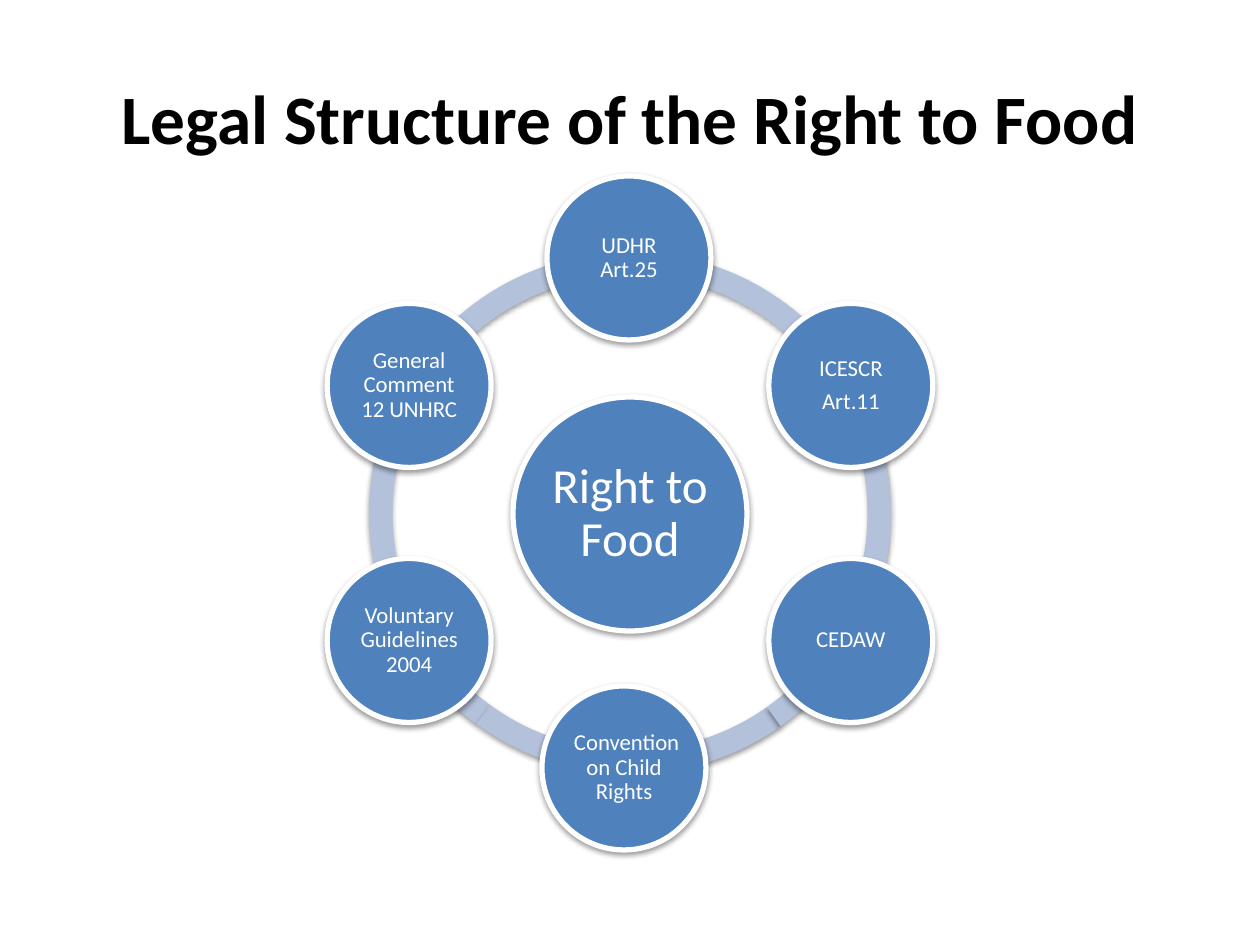
from dataclasses import dataclass
from math import cos, radians, sin

from lxml import etree
from pptx import Presentation
from pptx.dml.color import RGBColor
from pptx.enum.shapes import MSO_SHAPE
from pptx.enum.text import MSO_ANCHOR, PP_ALIGN
from pptx.oxml.ns import qn
from pptx.util import Pt

OVAL, ARC = MSO_SHAPE.OVAL, MSO_SHAPE.BLOCK_ARC
MIDDLE, CENTER = MSO_ANCHOR.MIDDLE, PP_ALIGN.CENTER
SCALE = 914400 / 126


def px(n):
    return round(n * SCALE)


@dataclass(frozen=True)
class Theme:
    font: str = "Calibri"
    black: str = "000000"
    white: str = "FFFFFF"
    blue: str = "4F81BD"
    pale: str = "B3C1DB"
    title: float = 39.6
    hub: int = 28
    node: int = 13


class Deck:
    def __init__(self, theme):
        self.theme = theme
        self.file = Presentation()
        self.file.slide_width, self.file.slide_height = px(1260), px(945)
        self.page = self.file.slides.add_slide(self.file.slide_layouts[5])
        self.group = self.page.shapes.add_group_shape()

    def label(self, frame, lines, size, color, bold=False, inset=None):
        frame.word_wrap = True
        frame.vertical_anchor = MIDDLE
        if inset is not None:
            frame.margin_left = frame.margin_right = px(inset)
            frame.margin_top = frame.margin_bottom = px(inset)
        for i, line in enumerate(lines):
            para = frame.add_paragraph() if i else frame.paragraphs[0]
            para.alignment = CENTER
            if inset is not None:
                para.line_spacing = 0.9
            if i:
                para.space_before = Pt(4.5)
            run = para.add_run()
            run.text = line
            font = run.font
            font.name, font.size, font.bold = self.theme.font, Pt(size), bold
            font.color.rgb = RGBColor.from_string(color)

    def title(self, text, x, y, w, h):
        box = self.page.shapes.title
        box.left, box.top, box.width, box.height = map(px, (x, y, w, h))
        self.label(box.text_frame, [text], self.theme.title, self.theme.black, True)

    def shade(self, shape):
        shape.shadow.inherit = False
        effects = shape._element.spPr.find(qn("a:effectLst"))
        outer = etree.SubElement(effects, qn("a:outerShdw"), blurRad="40000",
                                 dist="20000", dir="5400000", rotWithShape="0")
        color = etree.SubElement(outer, qn("a:srgbClr"), val=self.theme.black)
        etree.SubElement(color, qn("a:alpha"), val="38000")

    def round(self, kind, x, y, size, fill):
        """Place a round shape by its centre."""
        shape = self.group.shapes.add_shape(
            kind, px(x - size / 2), px(y - size / 2), px(size), px(size))
        shape.fill.solid()
        shape.fill.fore_color.rgb = RGBColor.from_string(fill)
        self.shade(shape)
        return shape

    def arc(self, x, y, size, start, end):
        shape = self.round(ARC, x, y, size, self.theme.pale)
        shape.line.fill.background()
        # Angles are stored in 60000ths of a degree, adjustments in 100000ths
        for i, value in enumerate((start * 0.6, end * 0.6, 0.045)):
            shape.adjustments[i] = value

    def disc(self, x, y, size, lines, points, inset):
        shape = self.round(OVAL, x, y, size, self.theme.blue)
        shape.line.color.rgb = RGBColor.from_string(self.theme.white)
        shape.line.width = Pt(3)
        self.label(shape.text_frame, lines, points, self.theme.white, inset=inset)


def main():
    theme = Theme()
    deck = Deck(theme)
    deck.title("Legal Structure of the Right to Food", 63, 38, 1134, 157)

    # Ring
    mid_x, mid_y, orbit = 630, 513, 255
    cuts = [161.76, 126, 90, 54.77, 18, 198, 161.76]
    for end, start in zip(cuts, cuts[1:]):
        deck.arc(mid_x, mid_y, 522, start, end)

    # Hub
    deck.disc(mid_x, mid_y + 1, 234, ["Right to Food"], theme.hub, 5)

    # Nodes, clockwise from the top, with a sideways shift
    nodes = [
        (["UDHR Art.25"], -1),
        (["ICESCR", "Art.11"], 0),
        (["CEDAW"], 0),
        ([" Convention on Child Rights"], -6),
        (["Voluntary Guidelines 2004"], 0),
        (["General Comment 12 UNHRC"], 0),
    ]
    for i, (lines, shift) in enumerate(nodes):
        turn = radians(i * 360 / len(nodes))
        deck.disc(mid_x + orbit * sin(turn) + shift, mid_y - orbit * cos(turn),
                  164, lines, theme.node, 2)

    deck.file.save("out.pptx")


if __name__ == "__main__":
    main()
